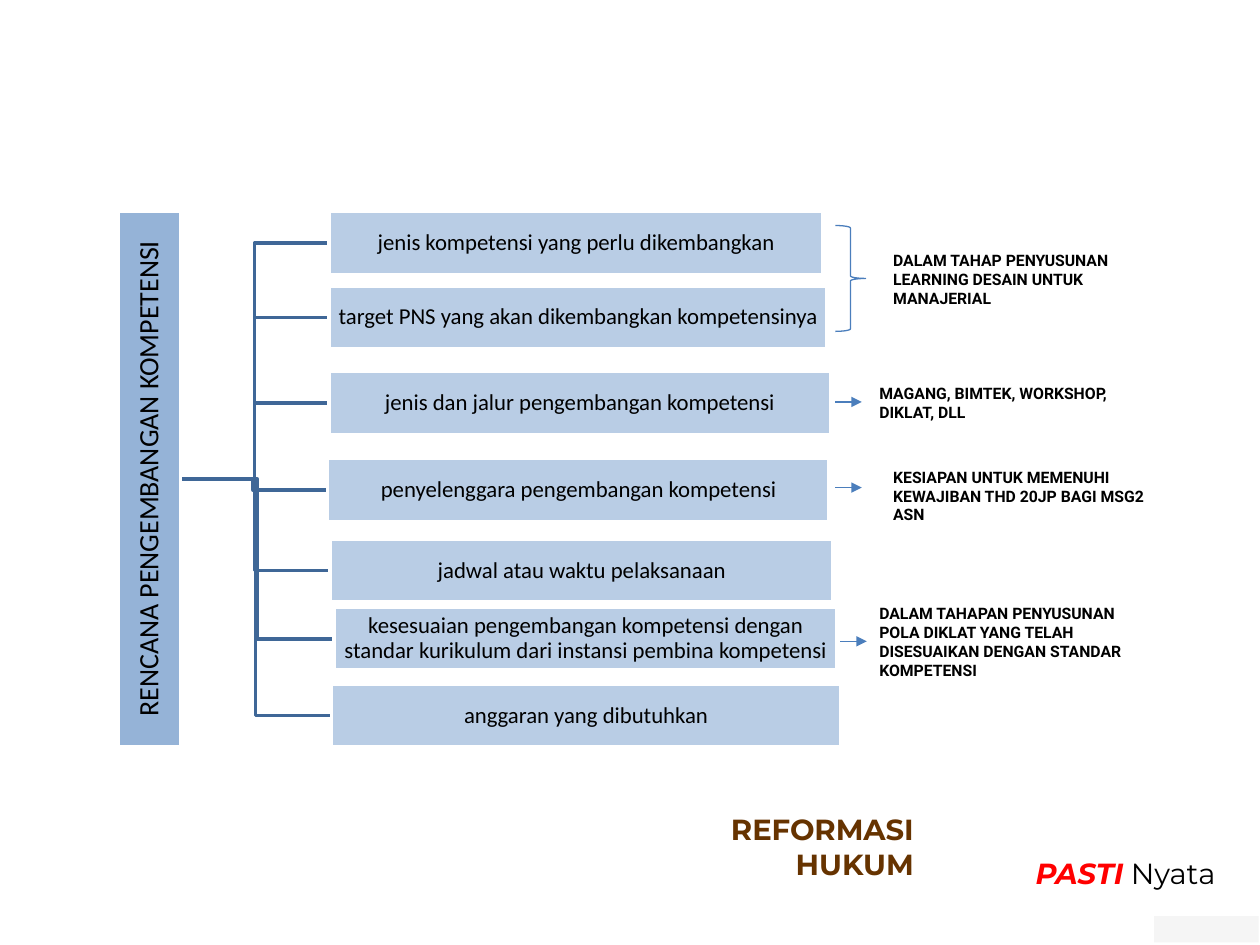
"""Builds the slide on the parts of a competency development plan."""
from lxml import etree
from pptx import Presentation
from pptx.dml.color import RGBColor
from pptx.enum.shapes import MSO_CONNECTOR, MSO_SHAPE
from pptx.enum.text import MSO_ANCHOR, MSO_AUTO_SIZE, PP_ALIGN
from pptx.oxml.ns import qn
from pptx.util import Pt

PX = 9144
RECTANGLE, BRACE = MSO_SHAPE.RECTANGLE, MSO_SHAPE.RIGHT_BRACE
STRAIGHT = MSO_CONNECTOR.STRAIGHT
MIDDLE, GROW = MSO_ANCHOR.MIDDLE, MSO_AUTO_SIZE.SHAPE_TO_FIT_TEXT
LEFT, CENTER, RIGHT = PP_ALIGN.LEFT, PP_ALIGN.CENTER, PP_ALIGN.RIGHT
WHITE, BLACK, BRANCH, ARROW = "FFFFFF", "000000", "3F6797", "4B7EBC"
ROOT_X, ROOT_Y, BAR = 143, 380, 50


def color(value):
    """Turns a hex string into a colour."""
    return RGBColor.from_string(value)


def write(box, lines, align, **formats):
    """Fills a box with lines, each a list of (text, own formats)."""
    for number, spans in enumerate(lines):
        frame = box.text_frame
        para = frame.add_paragraph() if number else frame.paragraphs[0]
        para.alignment = align
        for text, own in spans:
            span = para.add_run()
            span.text = text
            values = {**formats, **own}
            span.font.color.rgb = color(values.pop("ink", BLACK))
            for name, value in values.items():
                setattr(span.font, name, value)


deck = Presentation()
deck.slide_width, deck.slide_height = 1000 * PX, 750 * PX
page = deck.slides.add_slide(deck.slide_layouts[6])
shapes = page.shapes

footer = shapes.add_shape(RECTANGLE, 916 * PX, 727 * PX, 83 * PX, 21 * PX)
footer.shadow.inherit = False
footer.fill.solid()
footer.fill.fore_color.rgb = color("F5F5F5")
footer.line.fill.background()

items = [
    (261, 168, 392, "jenis kompetensi yang perlu dikembangkan"),
    (261, 227, 395, "target PNS yang akan dikembangkan kompetensinya"),
    (261, 295, 398, "jenis dan jalur pengembangan kompetensi"),
    (260, 364, 398, "penyelenggara pengembangan kompetensi"),
    (262, 428, 399, "jadwal atau waktu pelaksanaan"),
    (265, 482, 399, "kesesuaian pengembangan kompetensi dengan standar kurikulum "
                    "dari instansi pembina kompetensi"),
    (263, 543, 404, "anggaran yang dibutuhkan"),
]
for left, top, width, text in reversed(items):
    bend, end = (ROOT_X + left) // 2, top + BAR // 2
    builder = shapes.build_freeform(ROOT_X, ROOT_Y, scale=PX)
    builder.add_line_segments([(bend, ROOT_Y), (bend, end), (left, end)], close=False)
    branch = builder.convert_to_shape()
    branch.shadow.inherit = False
    branch.fill.background()
    branch.line.color.rgb = color(BRANCH)
    branch.line.width = Pt(2)

bars = [(-94, 355, 425, "RENCANA PENGEMBANGAN KOMPETENSI", 270, "95B3D7", 16)]
bars += [(*item, 0, "B9CDE5", 13) for item in items]
for left, top, width, text, turn, fill, size in bars:
    bar = shapes.add_shape(RECTANGLE, left * PX, top * PX, width * PX, BAR * PX)
    bar.rotation = turn
    bar.shadow.inherit = False
    bar.fill.solid()
    bar.fill.fore_color.rgb = color(fill)
    bar.line.color.rgb = color(WHITE)
    bar.line.width = Pt(2)
    frame = bar.text_frame
    frame.word_wrap = True
    frame.vertical_anchor = MIDDLE
    for side in ("left", "top", "right", "bottom"):
        setattr(frame, f"margin_{side}", PX)
    write(bar, [[(text, {})]], CENTER, name="Calibri", size=Pt(size))
    frame.paragraphs[0].line_spacing = 0.9

brace = shapes.add_shape(BRACE, 663 * PX, 179 * PX, 24 * PX, 84 * PX)
brace.shadow.inherit = False
brace.fill.background()
brace.line.color.rgb = color(ARROW)
brace.line.width = Pt(0.75)

notes = [
    (699, 194, 210, 56, "DALAM TAHAP PENYUSUNAN LEARNING DESAIN UNTUK MANAJERIAL"),
    (688, 300, 221, 40, "MAGANG, BIMTEK, WORKSHOP, DIKLAT, DLL"),
    (699, 366, 221, 56, "KESIAPAN UNTUK MEMENUHI KEWAJIBAN THD 20JP BAGI MSG2 ASN"),
    (688, 474, 221, 70, "DALAM TAHAPAN PENYUSUNAN POLA DIKLAT YANG TELAH "
                        "DISESUAIKAN DENGAN STANDAR KOMPETENSI"),
]
for left, top, width, height, text in notes:
    note = shapes.add_textbox(left * PX, top * PX, width * PX, height * PX)
    note.text_frame.word_wrap = True
    note.text_frame.auto_size = GROW
    write(note, [[(text, {})]], LEFT, name="Roboto", size=Pt(9), bold=True)

for start, end, y, target in [(663, 684, 319, None), (663, 684, 387, None),
                              (667, 688, 509, note)]:
    arrow = shapes.add_connector(STRAIGHT, start * PX, y * PX, end * PX, y * PX)
    if target is not None:
        arrow.end_connect(target, 1)
    arrow.line.color.rgb = color(ARROW)
    arrow.line.width = Pt(0.75)
    etree.SubElement(arrow.line._get_or_add_ln(), qn("a:tailEnd"), type="triangle")
    etree.SubElement(arrow._element.spPr, qn("a:effectLst"))

slogans = [
    (812, 674, 178, 38, LEFT, [[("PASTI", {"ink": "FF0000", "bold": True, "italic": True}),
                                (" Nyata", {})]]),
    (561, 639, 174, 66, RIGHT, [[(word, {"ink": "663300", "bold": True})]
                                for word in ("REFORMASI", "HUKUM")]),
]
for left, top, width, height, align, lines in slogans:
    slogan = shapes.add_textbox(left * PX, top * PX, width * PX, height * PX)
    slogan.text_frame.word_wrap = False
    slogan.text_frame.auto_size = GROW
    write(slogan, lines, align, name="Montserrat", size=Pt(16.6))

deck.save("out.pptx")
